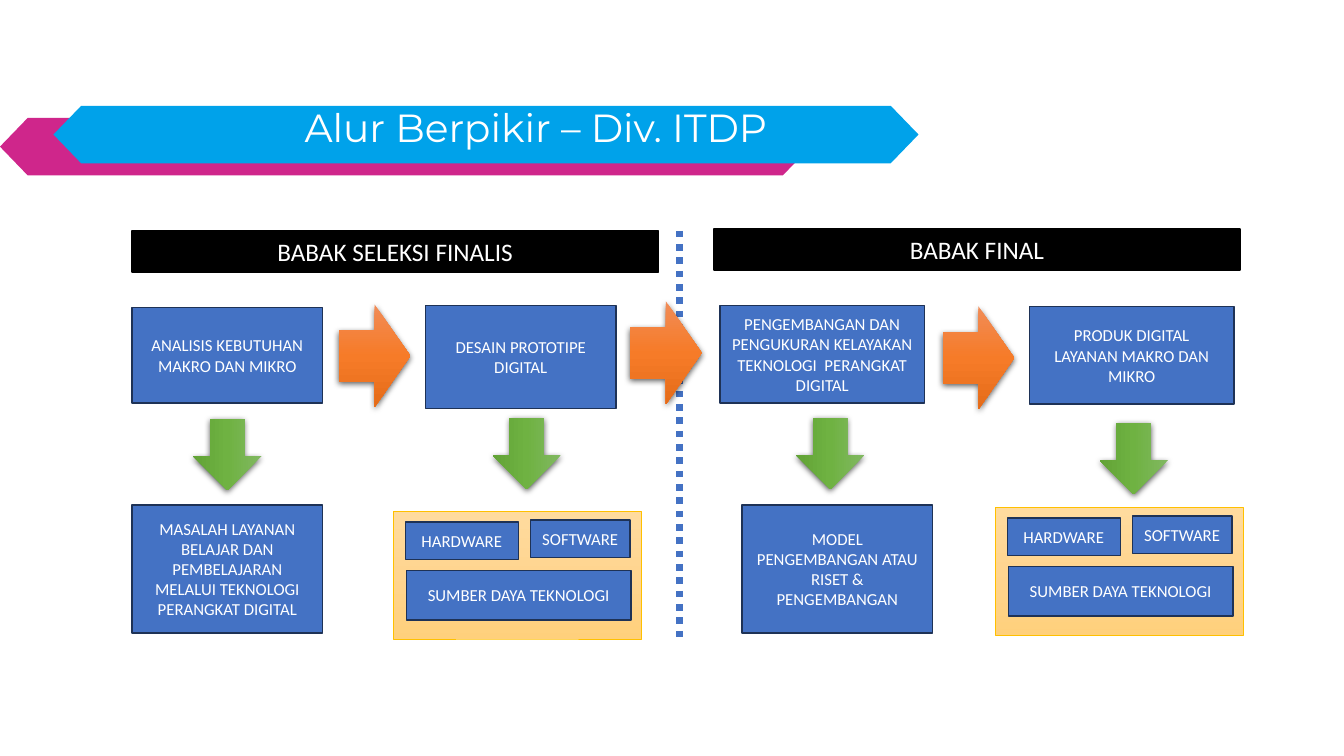
import copy

import pptx
import pptx.util
import pptx.dml.color
import pptx.enum.dml
import pptx.enum.shapes
import pptx.enum.text
import pptx.oxml
import pptx.oxml.ns
from lxml import etree

Inches = pptx.util.Inches
Pt = pptx.util.Pt
KIND = pptx.enum.shapes.MSO_SHAPE
ALIGN = pptx.enum.text.PP_ALIGN
ANCHOR = pptx.enum.text.MSO_ANCHOR
qn = pptx.oxml.ns.qn

COLORS = {
    "blue": "4472C4", "navy": "1E3256", "black": "000000", "white": "FFFFFF",
    "gold": "FFC000", "pink": "CF268B", "cyan": "00A2EA",
}
FADES = {
    "sand": ("FFDB9E", "FFD590", "FFD07C"),
    "orange": ("F18C57", "F67B28", "E56C19"),
    "green": ("81B861", "6FB242", "62A336"),
}


def color(name):
    return pptx.dml.color.RGBColor.from_string(COLORS[name])


def write(shape, text, size=12, font="Calibri", align=ALIGN.CENTER,
          anchor=ANCHOR.MIDDLE):
    frame = shape.text_frame
    frame.word_wrap = True
    frame.vertical_anchor = anchor
    frame.text = text
    for para in frame.paragraphs:
        para.alignment = align
        para.font.size = Pt(size)
        para.font.name = font
        para.font.color.rgb = color("white")


def fade(shape, name):
    """Fill with a three-stop gradient, top to bottom."""
    shape.fill.gradient()
    shape.fill.gradient_angle = 270
    stops = shape.element.spPr.find(qn("a:gradFill")).find(qn("a:gsLst"))
    for stop in list(stops):
        stops.remove(stop)
    for place, shade in zip((0, 50000, 100000), FADES[name]):
        stop = etree.SubElement(stops, qn("a:gs"), pos=str(place))
        etree.SubElement(stop, qn("a:srgbClr"), val=shade)


def shade(shape):
    """Cast a soft shadow straight down."""
    effects = shape.element.spPr.find(qn("a:effectLst"))
    outer = etree.SubElement(
        effects, qn("a:outerShdw"), blurRad=str(Pt(4.5)), dist=str(Pt(1.5)),
        dir="5400000", algn="ctr", rotWithShape="0")
    tint = etree.SubElement(outer, qn("a:srgbClr"), val=COLORS["black"])
    etree.SubElement(tint, qn("a:alpha"), val="63000")


def draw(slide, kind, x, y, w, h, fill, line=None, width=1):
    shape = slide.shapes.add_shape(
        kind, Inches(x), Inches(y), Inches(w), Inches(h))
    if fill in FADES:
        fade(shape, fill)
    else:
        shape.fill.solid()
        shape.fill.fore_color.rgb = color(fill)
    if line:
        shape.line.color.rgb = color(line)
        shape.line.width = Pt(width)
    else:
        shape.line.fill.background()
    shape.shadow.inherit = False
    return shape


def box(slide, text, x, y, w, h, kind=KIND.RECTANGLE):
    write(draw(slide, kind, x, y, w, h, "blue", "navy"), text)


def header(slide, text, x, y):
    bar = draw(slide, KIND.RECTANGLE, x, y, 5.22, 0.41, "black", "black")
    write(bar, text, size=18)


def arrow(slide, x, y, h, fill, turn=0):
    shape = draw(slide, KIND.RIGHT_ARROW, x, y, 0.71, h, fill)
    shape.rotation = turn
    shade(shape)


def panel(slide, x, y):
    draw(slide, KIND.RECTANGLE, x, y, 2.46, 1.27, "sand", "gold", 0.5)
    for text, dx, dy, w, h in (
            ("HARDWARE", 0.12, 0.11, 1.12, 0.37),
            ("SOFTWARE", 1.36, 0.09, 0.99, 0.37),
            ("SUMBER DAYA TEKNOLOGI", 0.13, 0.59, 2.23, 0.49)):
        box(slide, text, x + dx, y + dy, w, h, KIND.FLOWCHART_PROCESS)


def divide(slide, x, top, end):
    line = slide.shapes.add_connector(
        pptx.enum.shapes.MSO_CONNECTOR.STRAIGHT,
        Inches(x), Inches(top), Inches(x), Inches(end))
    line.line.color.rgb = color("blue")
    line.line.width = Pt(4.75)
    line.line.dash_style = pptx.enum.dml.MSO_LINE.ROUND_DOT
    etree.SubElement(line.element.spPr, qn("a:effectLst"))


def banner(slide, text):
    for x, y, w, fill in ((0, 1.17, 8.04, "pink"), (0.53, 1.05, 8.58, "cyan")):
        ribbon = draw(slide, KIND.HEXAGON, x, y, w, 0.57, fill)
        ribbon.adjustments[0] = 0.483
        ribbon.adjustments[1] = 1.155
    title = slide.shapes.title
    title.left, title.top = Inches(2.92), Inches(0.97)
    title.width, title.height = Inches(7.22), Inches(0.57)
    write(title, text, size=28, font="Montserrat", align=ALIGN.LEFT,
          anchor=ANCHOR.TOP)
    title.text_frame.auto_size = pptx.enum.text.MSO_AUTO_SIZE.SHAPE_TO_FIT_TEXT
    # Bring the title in front of its ribbons
    title.element.getparent().append(title.element)


def main():
    deck = pptx.Presentation()
    deck.slide_width, deck.slide_height = Inches(13.33), Inches(7.5)
    slide = deck.slides.add_slide(deck.slide_layouts[5])

    # Two rounds and the line between them
    divide(slide, 6.74, 2.29, 6.33)
    header(slide, "BABAK SELEKSI FINALIS", 1.31, 2.29)
    header(slide, "BABAK FINAL", 7.08, 2.27)

    # Steps
    for step in (
            ("ANALISIS KEBUTUHAN MAKRO DAN MIKRO", 1.31, 3.05, 1.89, 0.95),
            ("DESAIN PROTOTIPE DIGITAL", 4.22, 3.03, 1.89, 1.02),
            ("PENGEMBANGAN DAN PENGUKURAN KELAYAKAN TEKNOLOGI  PERANGKAT "
             "DIGITAL", 7.14, 3.03, 2.03, 0.97),
            ("PRODUK DIGITAL\nLAYANAN MAKRO DAN MIKRO",
             10.21, 3.04, 2.03, 0.97)):
        box(slide, *step)
    for x, y in ((3.36, 3.02), (6.25, 2.99), (9.35, 3.04)):
        arrow(slide, x, y, 1.02, "orange")

    # Results
    for x, y in ((1.9, 4.17), (4.87, 4.16), (7.88, 4.16), (10.89, 4.21)):
        arrow(slide, x, y, 0.68, "green", turn=90)
    for text, x in (
            ("MASALAH LAYANAN BELAJAR DAN PEMBELAJARAN MELALUI TEKNOLOGI "
             "PERANGKAT DIGITAL", 1.31),
            ("MODEL PENGEMBANGAN ATAU RISET & PENGEMBANGAN", 7.36)):
        box(slide, text, x, 5.01, 1.89, 1.27)
    panel(slide, 3.9, 5.07)
    panel(slide, 9.87, 5.03)

    banner(slide, "Alur Berpikir – Div. ITDP")
    deck.save("out.pptx")


if __name__ == "__main__":
    main()
